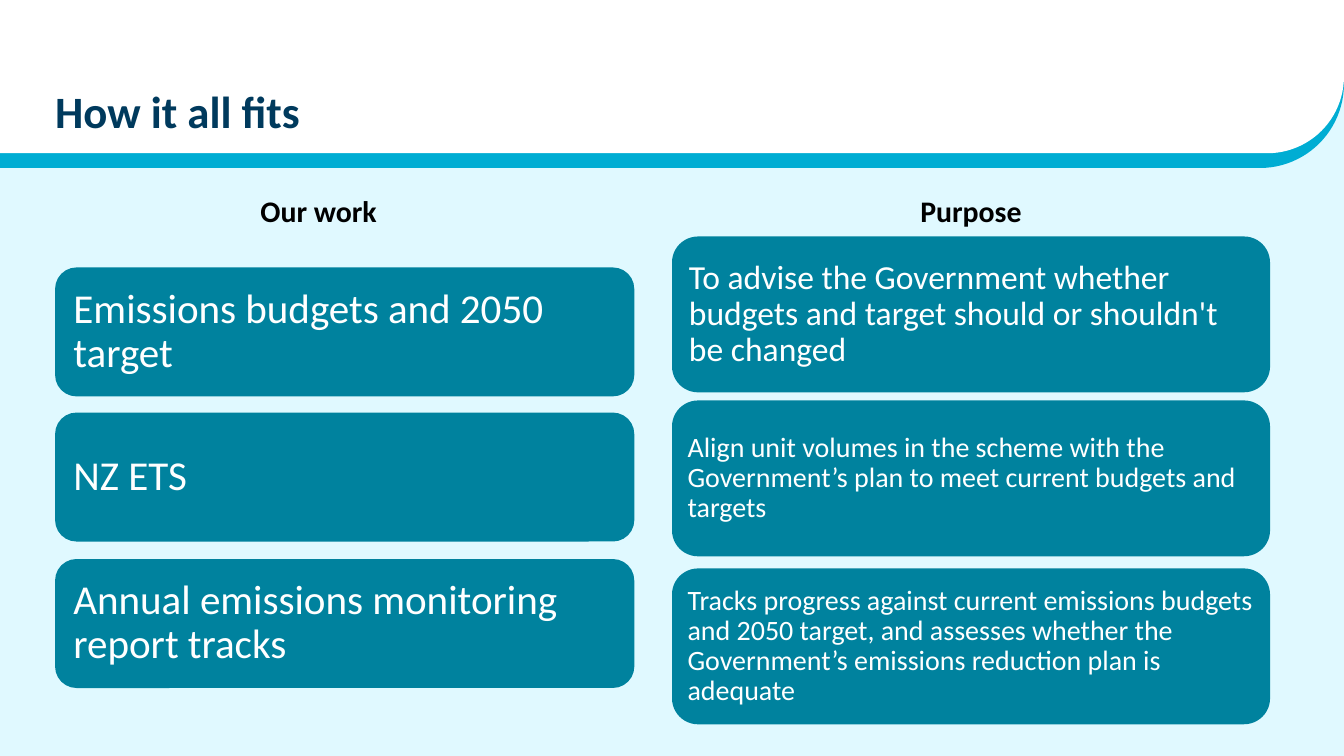
import pptx
import pptx.dml.color
import pptx.enum.shapes
import pptx.enum.text
import pptx.oxml
import pptx.oxml.ns
import pptx.util

RGBColor = pptx.dml.color.RGBColor
Inches = pptx.util.Inches
SHAPE = pptx.enum.shapes.MSO_SHAPE
ANCHOR = pptx.enum.text.MSO_ANCHOR
ALIGN = pptx.enum.text.PP_ALIGN
AUTO_SIZE = pptx.enum.text.MSO_AUTO_SIZE

PALE_BLUE = RGBColor(0xE0, 0xF9, 0xFF)
BRIGHT_BLUE = RGBColor(0x00, 0xAD, 0xD3)
TEAL = RGBColor(0x00, 0x82, 0x9E)
NAVY = RGBColor(0x00, 0x3A, 0x5D)
WHITE = RGBColor(0xFF, 0xFF, 0xFF)
BLACK = RGBColor(0, 0, 0)

FONT = "Calibri"
SLIDE_WIDTH = 10
SLIDE_HEIGHT = SLIDE_WIDTH * 9 / 16
MARGIN = 0.41

# Columns: left, width, card height; cards: top, text size, inset, text
WORK_COLUMN = (MARGIN, 4.31, 0.96)
WORK_CARDS = [
    (1.99, 22, 0.09, "Emissions budgets and 2050 target"),
    (3.07, 22, 0.09, "NZ ETS"),
    (4.16, 22, 0.09, "Annual emissions monitoring report tracks"),
]
PURPOSE_COLUMN = (5, 4.45, 1.16)
PURPOSE_CARDS = [
    (1.76, 18, 0.07, "To advise the Government whether budgets and target "
                     "should or shouldn't be changed"),
    (2.98, 15, 0.06, "Align unit volumes in the scheme with the Government’s "
                     "plan to meet current budgets and targets"),
    (4.23, 15, 0.06, "Tracks progress against current emissions budgets and "
                     "2050 target, and assesses whether the Government’s "
                     "emissions reduction plan is adequate"),
]


def set_text(frame, text, size, color, bold=False, inset=0, line_spacing=0.9):
    frame.word_wrap = True
    frame.auto_size = AUTO_SIZE.NONE
    frame.vertical_anchor = ANCHOR.MIDDLE
    frame.margin_left = frame.margin_right = Inches(inset)
    frame.margin_top = frame.margin_bottom = Inches(inset)
    frame.text = text
    paragraph = frame.paragraphs[0]
    paragraph.alignment = ALIGN.LEFT
    paragraph.line_spacing = line_spacing
    for run in paragraph.runs:
        run.font.name = FONT
        run.font.size = pptx.util.Pt(size)
        run.font.bold = bold
        run.font.color.rgb = color


def add_filled(slide, preset, left, top, width, height, color):
    shape = slide.shapes.add_shape(
        preset, Inches(left), Inches(top), Inches(width), Inches(height))
    shape.shadow.inherit = False
    shape.fill.solid()
    shape.fill.fore_color.rgb = color
    shape.line.fill.background()
    return shape


def add_header_band(slide, height, color):
    """Full-width band whose bottom right corner is rounded."""
    band = add_filled(slide, SHAPE.ROUND_1_RECTANGLE,
                      0, 0, SLIDE_WIDTH, height, color)
    band.adjustments[0] = 0.5
    band.rotation = 180
    band._element.spPr.xfrm.set("flipH", "1")


def add_title(slide, text):
    title = slide.shapes.title
    title.left, title.top = Inches(MARGIN), Inches(0.3)
    title.width, title.height = Inches(8.9), Inches(1.09)
    set_text(title.text_frame, text, 24, NAVY, bold=True)
    # Bring the title in front of the header bands
    slide.shapes._spTree.append(title._element)


def add_cards(slide, column, cards):
    left, width, height = column
    for top, size, inset, text in cards:
        card = add_filled(slide, SHAPE.ROUNDED_RECTANGLE,
                          left, top, width, height, TEAL)
        set_text(card.text_frame, text, size, WHITE, inset=inset)


def add_column_headings(slide, headings, tab_stop):
    """Both headings share one line, the second set at a tab stop."""
    box = slide.shapes.add_textbox(
        Inches(1.84), Inches(1.38), Inches(5.96), Inches(0.37))
    set_text(box.text_frame, "\t".join(headings), 16, BLACK,
             bold=True, inset=0.1, line_spacing=1.0)
    box.text_frame.margin_top = box.text_frame.margin_bottom = Inches(0.05)
    properties = box.text_frame.paragraphs[0]._p.get_or_add_pPr()
    namespace = pptx.oxml.ns.nsdecls("a")
    properties.append(pptx.oxml.parse_xml(
        f'<a:tabLst {namespace}><a:tab pos="{Inches(tab_stop)}" algn="l"/>'
        '</a:tabLst>'))


def main():
    presentation = pptx.Presentation()
    presentation.slide_width = Inches(SLIDE_WIDTH)
    presentation.slide_height = Inches(SLIDE_HEIGHT)
    slide = presentation.slides.add_slide(presentation.slide_layouts[5])

    # Background and header
    slide.background.fill.solid()
    slide.background.fill.fore_color.rgb = PALE_BLUE
    add_header_band(slide, 1.25, BRIGHT_BLUE)
    add_header_band(slide, 1.14, WHITE)
    add_title(slide, "How it all fits")

    # Work matched with its purpose
    add_cards(slide, WORK_COLUMN, WORK_CARDS)
    add_cards(slide, PURPOSE_COLUMN, PURPOSE_CARDS)
    add_column_headings(slide, ["Our work", "Purpose"], 4.91)

    presentation.save("out.pptx")


if __name__ == "__main__":
    main()
